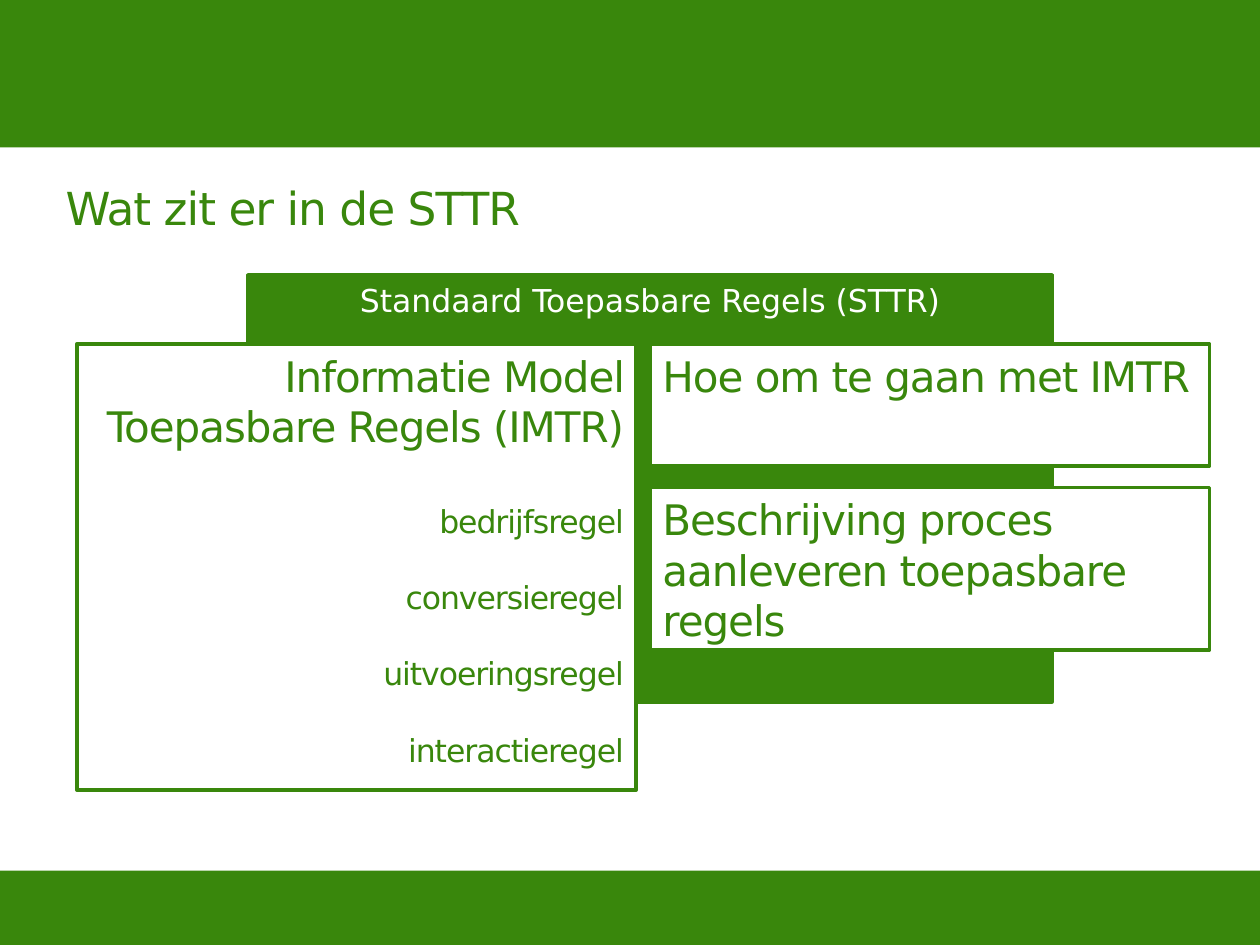
"""Build the slide that shows what the STTR contains."""
import pptx
import pptx.dml.color
import pptx.enum.shapes
import pptx.enum.text
import pptx.util

Inches = pptx.util.Inches
Pt = pptx.util.Pt
ALIGN = pptx.enum.text.PP_ALIGN
GREEN = pptx.dml.color.RGBColor(0x39, 0x87, 0x0C)
WHITE = pptx.dml.color.RGBColor(0xFF, 0xFF, 0xFF)
FONT = "DejaVu Sans"
TIGHT = -60

WIDTH, HEIGHT = 10, 7.5
BANDS = [(0, 1.17), (6.91, 0.59)]
TITLE = ("Wat zit er in de STTR", (0.42, 1.38, 8.97, 0.62))
LEFT, RIGHT, TOP, BOX_WIDTH = 0.61, 5.16, 2.73, 4.44
RULES = ["bedrijfsregel", "conversieregel", "uitvoeringsregel", "interactieregel"]
RULE_LINES = [(rule, 18, 22 if index else 29) for index, rule in enumerate(RULES)]
BOXES = [
    {"at": (1.97, 2.18, 6.38, 3.39), "fill": GREEN, "color": WHITE,
     "align": ALIGN.CENTER, "spacing": 0,
     "lines": [("Standaard Toepasbare Regels (STTR)", 18, 0)]},
    {"at": (LEFT, TOP, BOX_WIDTH, 3.54), "align": ALIGN.RIGHT,
     "lines": [("Informatie Model Toepasbare Regels (IMTR)", 24, 0)] + RULE_LINES},
    {"at": (RIGHT, TOP, BOX_WIDTH, 0.97),
     "lines": [("Hoe om te gaan met IMTR", 24, 0)]},
    {"at": (RIGHT, 3.87, BOX_WIDTH, 1.29),
     "lines": [("Beschrijving proces aanleveren toepasbare regels", 24, 0)]},
]


def add_rectangle(slide, at, fill):
    shape = slide.shapes.add_shape(
        pptx.enum.shapes.MSO_SHAPE.RECTANGLE, *map(Inches, at))
    shape.shadow.inherit = False
    shape.fill.solid()
    shape.fill.fore_color.rgb = fill
    shape.line.fill.background()
    return shape


def write_lines(shape, lines, color=GREEN, align=ALIGN.LEFT, spacing=TIGHT):
    frame = shape.text_frame
    frame_format = {"word_wrap": True,
                    "auto_size": pptx.enum.text.MSO_AUTO_SIZE.NONE,
                    "vertical_anchor": pptx.enum.text.MSO_ANCHOR.TOP}
    for name, value in frame_format.items():
        setattr(frame, name, value)
    for index, (text, size, gap) in enumerate(lines):
        paragraph = frame.add_paragraph() if index else frame.paragraphs[0]
        paragraph.alignment = align
        paragraph.space_before = Pt(gap)
        run = paragraph.add_run()
        run.text = text
        for name, value in {"name": FONT, "size": Pt(size)}.items():
            setattr(run.font, name, value)
        run.font.color.rgb = color
        if spacing:
            run.font._element.set("spc", str(spacing))


def main():
    presentation = pptx.Presentation()
    presentation.slide_width = Inches(WIDTH)
    presentation.slide_height = Inches(HEIGHT)
    slide = presentation.slides.add_slide(presentation.slide_layouts[5])

    for top, height in BANDS:
        add_rectangle(slide, (0, top, WIDTH, height), GREEN)

    text, at = TITLE
    title = slide.shapes.title
    for name, value in zip(("left", "top", "width", "height"), at):
        setattr(title, name, Inches(value))
    title.fill.solid()
    title.fill.fore_color.rgb = WHITE
    write_lines(title, [(text, 26, 0)])

    for box in BOXES:
        shape = add_rectangle(slide, box["at"], box.get("fill", WHITE))
        shape.line.color.rgb = GREEN
        shape.line.width = Pt(2)
        write_lines(shape, box["lines"], box.get("color", GREEN),
                    box.get("align", ALIGN.LEFT), box.get("spacing", TIGHT))

    presentation.save("out.pptx")


if __name__ == "__main__":
    main()
